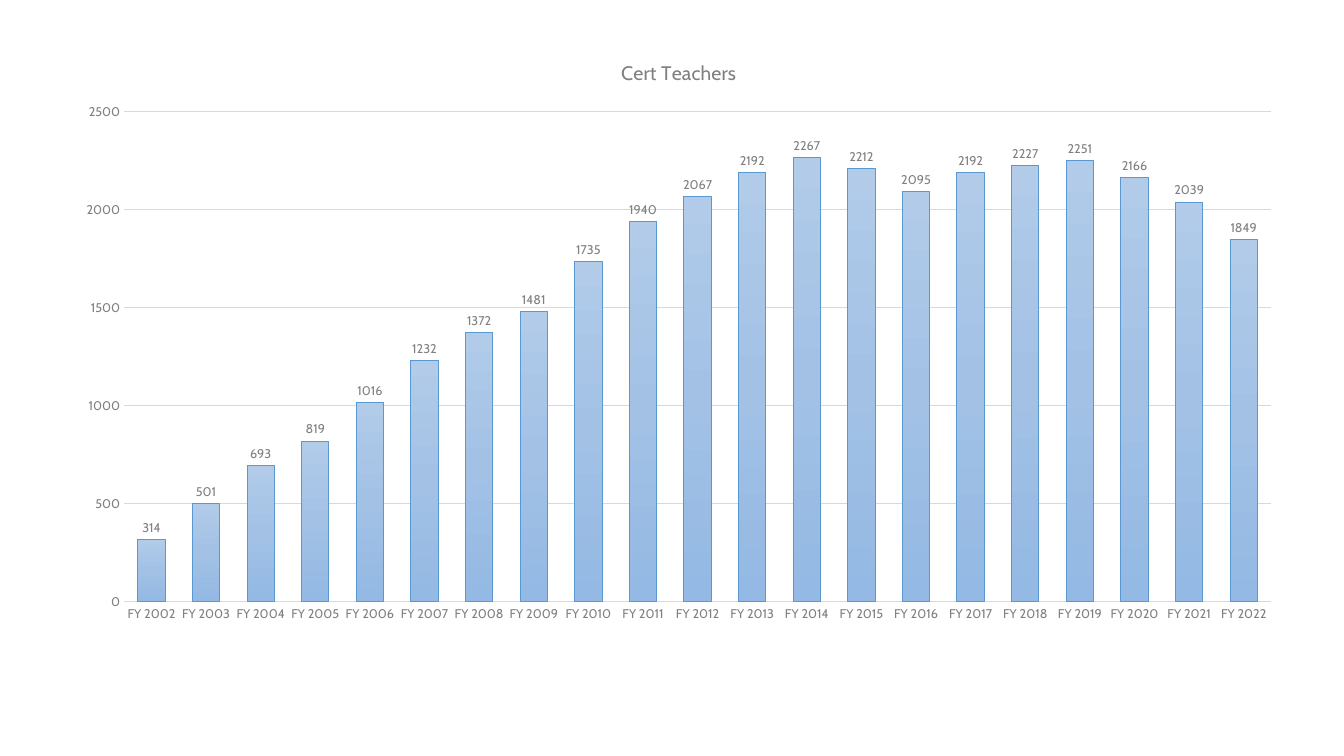
from copy import deepcopy

from pptx import Presentation
from pptx import util as u
from pptx.chart.data import CategoryChartData
from pptx.dml.color import RGBColor
from pptx.enum import chart as ch

GRAY = RGBColor(0x80, 0x80, 0x80)
RULE = RGBColor(0xD9, 0xD9, 0xD9)
EDGE = RGBColor(0x59, 0x98, 0xD0)
BLACK = RGBColor(0, 0, 0)
SHADES = (
    (0, RGBColor(0xB1, 0xCB, 0xE9)),
    (0.5, RGBColor(0xA3, 0xC1, 0xE5)),
    (1, RGBColor(0x93, 0xB9, 0xE4)),
)
NAME = "Cert Teachers"
START = 2002
COUNTS = (314, 501, 693, 819, 1016, 1232, 1372, 1481, 1735, 1940, 2067,
          2192, 2267, 2212, 2095, 2192, 2227, 2251, 2166, 2039, 1849)


def px(n):
    return u.Emu(n * 9525)


class Deck:
    face = "Cabin"

    def __init__(self):
        self.prs = Presentation()
        self.prs.slide_width, self.prs.slide_height = px(1280), px(720)
        self.slide = self.prs.slides.add_slide(self.prs.slide_layouts[6])

    def font(self, font, size, color=GRAY):
        font.name, font.size, font.bold = self.face, u.Pt(size), False
        font.color.rgb = color

    def line(self, line, color):
        line.color.rgb, line.width = color, u.Pt(0.75)

    def columns(self, x, y, w, h, name, cats, vals):
        data = CategoryChartData()
        data.categories = cats
        data.add_series(name, vals)
        kind = ch.XL_CHART_TYPE.COLUMN_CLUSTERED
        chart = self.slide.shapes.add_chart(
            kind, px(x), px(y), px(w), px(h), data).chart
        self.font(chart.font, 10, BLACK)
        chart.has_legend = False
        self.title(chart, name)
        self.axes(chart)
        self.bars(chart.plots[0])

    def title(self, chart, name):
        chart.has_title = True
        para = chart.chart_title.text_frame.paragraphs[0]
        para.text = name
        self.font(para.font, 14)
        chart.chart_title.include_in_layout = False

    def axes(self, chart):
        cat, val = chart.category_axis, chart.value_axis
        for axis in (cat, val):
            axis.major_tick_mark = axis.minor_tick_mark = ch.XL_TICK_MARK.NONE
            self.font(axis.tick_labels.font, 9)
        self.line(cat.format.line, RULE)
        val.format.line.fill.background()
        val.minimum_scale, val.maximum_scale, val.major_unit = 0, 2500, 500
        val.has_major_gridlines = True
        self.line(val.major_gridlines.format.line, RULE)

    def bars(self, plot):
        plot.gap_width, plot.overlap = 100, -24
        plot.vary_by_categories = False
        bars = plot.series[0]
        fill = bars.format.fill
        fill.gradient()
        fill.gradient_angle = 270
        stops = bars._element.xpath(".//a:gsLst")[0]
        stops.insert(1, deepcopy(stops[0]))
        for stop, (place, color) in zip(fill.gradient_stops, SHADES):
            stop.position, stop.color.rgb = place, color
        self.line(bars.format.line, EDGE)
        labels = bars.data_labels
        labels.show_value = True
        labels.position = ch.XL_LABEL_POSITION.OUTSIDE_END
        self.font(labels.font, 9)


def main():
    deck = Deck()
    years = [f"FY {START + i}" for i in range(len(COUNTS))]
    deck.columns(59, 37, 1175, 566, NAME, years, COUNTS)
    deck.prs.save("out.pptx")


if __name__ == "__main__":
    main()
